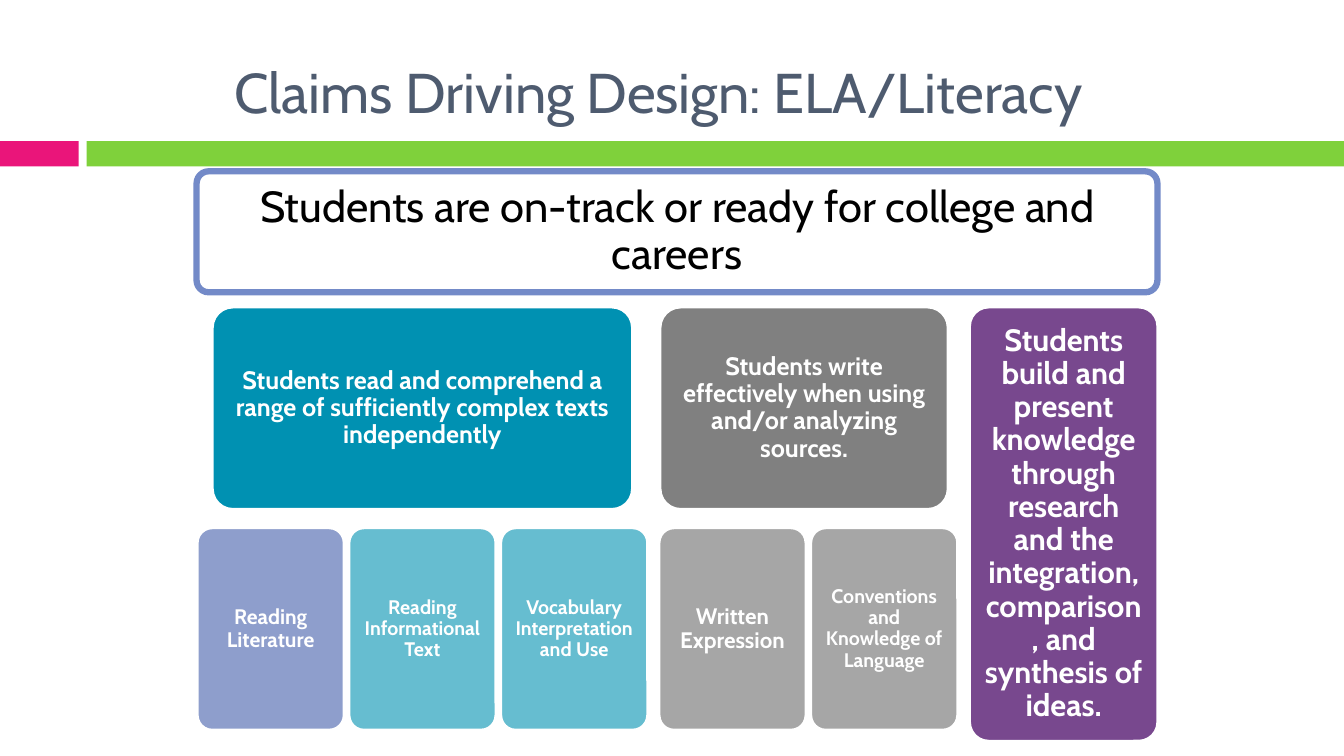
"""Builds a slide of nested claims that drive the design of ELA/Literacy."""
from lxml.etree import SubElement
from pptx import Presentation
from pptx.dml.color import RGBColor as RGB
from pptx.enum.shapes import MSO_SHAPE as SHAPE
from pptx.enum.text import MSO_ANCHOR as ANCHOR, PP_ALIGN as ALIGN
from pptx.oxml.ns import qn
from pptx.util import Inches, Pt

WHITE = RGB(0xFF, 0xFF, 0xFF)
BLACK = RGB(0, 0, 0)
SLATE = RGB(0x4E, 0x5B, 0x6F)
PINK = RGB(0xEA, 0x15, 0x7A)
GREEN = RGB(0x7F, 0xD1, 0x3B)
BLUE = RGB(0x73, 0x8A, 0xC8)
NAVY = RGB(0x43, 0x5E, 0xAA)
TEAL = RGB(0x00, 0x91, 0xB2)
GRAY = RGB(0x80, 0x80, 0x80)
SILVER = RGB(0xA6, 0xA6, 0xA6)
PURPLE = RGB(0x78, 0x48, 0x8E)

TITLE = "Claims Driving Design: ELA/Literacy"
GOAL = "Students are on-track or ready for college and careers"
CLAIMS = [
    dict(text="Students read and comprehend a range of sufficiently complex texts independently",
         fill=TEAL, left=2.11, wide=4.16, start=1.96, parts=[
             ("Reading Literature", 15, NAVY, 60),
             ("Reading Informational Text", 14, TEAL, 60),
             ("Vocabulary Interpretation and Use", 14, TEAL, 60)]),
    dict(text="Students write effectively when using and/or analyzing sources.",
         fill=GRAY, left=6.55, wide=2.85, start=6.54, parts=[
             ("Written Expression", 16, SILVER, 100),
             ("Conventions and Knowledge of Language", 14, SILVER, 100)]),
]
RESEARCH = ("Students build and present knowledge through research and the "
            "integration, comparison, and synthesis of ideas.")

WIDE, HIGH = 13.33, 7.5
BAND, BAND_H = 1.4, 0.25
STRIPES = [(0, 0.78, PINK), (0.86, WIDE - 0.86, GREEN)]
TOP, LOW, ROW = 3.05, 5.24, 2
PART, STEP = 1.45, 1.505


def write(shape, text, size, color=WHITE, bold=True, pad=0.06, anchor=ANCHOR.MIDDLE, line=0.9):
    """Put formatted, centred text in a shape."""
    frame = shape.text_frame
    frame.word_wrap = True
    frame.vertical_anchor = anchor
    frame.margin_left = frame.margin_right = Inches(pad)
    frame.margin_top = frame.margin_bottom = Inches(pad)
    para = frame.paragraphs[0]
    para.alignment = ALIGN.CENTER
    para.line_spacing = line
    run = para.add_run()
    run.text = text
    font = run.font
    font.name, font.size, font.bold = "Cabin", Pt(size), bold
    font.color.rgb = color


def block(slide, kind, box, fill, edge=None, width=1.5, alpha=100):
    """Add a filled shape at a box given in inches."""
    shape = slide.shapes.add_shape(kind, *map(Inches, box))
    shape.shadow.inherit = False
    shape.fill.solid()
    shape.fill.fore_color.rgb = fill
    if alpha < 100:
        tint = shape.fill._xPr.find(qn("a:solidFill"))[0]
        SubElement(tint, qn("a:alpha")).set("val", str(alpha * 1000))
    if edge is None:
        shape.line.fill.background()
    else:
        shape.line.color.rgb = edge
        shape.line.width = Pt(width)
    return shape


def card(slide, box, text, size, fill, pad=0.06, alpha=100):
    """Add a white-edged rounded card with its text."""
    shape = block(slide, SHAPE.ROUNDED_RECTANGLE, box, fill, WHITE, alpha=alpha)
    shape.adjustments[0] = 0.1
    write(shape, text, size, pad=pad)


def main():
    """Lay out the slide and save it."""
    deck = Presentation()
    deck.slide_width, deck.slide_height = Inches(WIDE), Inches(HIGH)
    slide = deck.slides.add_slide(deck.slide_layouts[5])

    for left, wide, fill in STRIPES:
        block(slide, SHAPE.RECTANGLE, (left, BAND, wide, BAND_H), fill)

    title = slide.shapes.title
    title.left, title.top = Inches(1.95), Inches(0)
    title.width, title.height = Inches(9.16), Inches(1.24)
    write(title, TITLE, 40, SLATE, False, 0, ANCHOR.BOTTOM, 1)

    goal = block(slide, SHAPE.ROUNDED_RECTANGLE, (1.95, 1.7, 9.53, 1.2), WHITE, BLUE, 4.5)
    goal.adjustments[0] = 0.1
    write(goal, GOAL, 31, BLACK, False, 0.13)

    for claim in CLAIMS:
        card(slide, (claim["left"], TOP, claim["wide"], ROW), claim["text"], 18,
             claim["fill"], 0.07)
        for col, (text, size, fill, alpha) in enumerate(claim["parts"]):
            box = (claim["start"] + col * STEP, LOW, PART, ROW)
            card(slide, box, text, size, fill, alpha=alpha)

    card(slide, (9.62, TOP, 1.86, 4.3), RESEARCH, 22, PURPLE, 0.09)
    deck.save("out.pptx")


if __name__ == "__main__":
    main()
